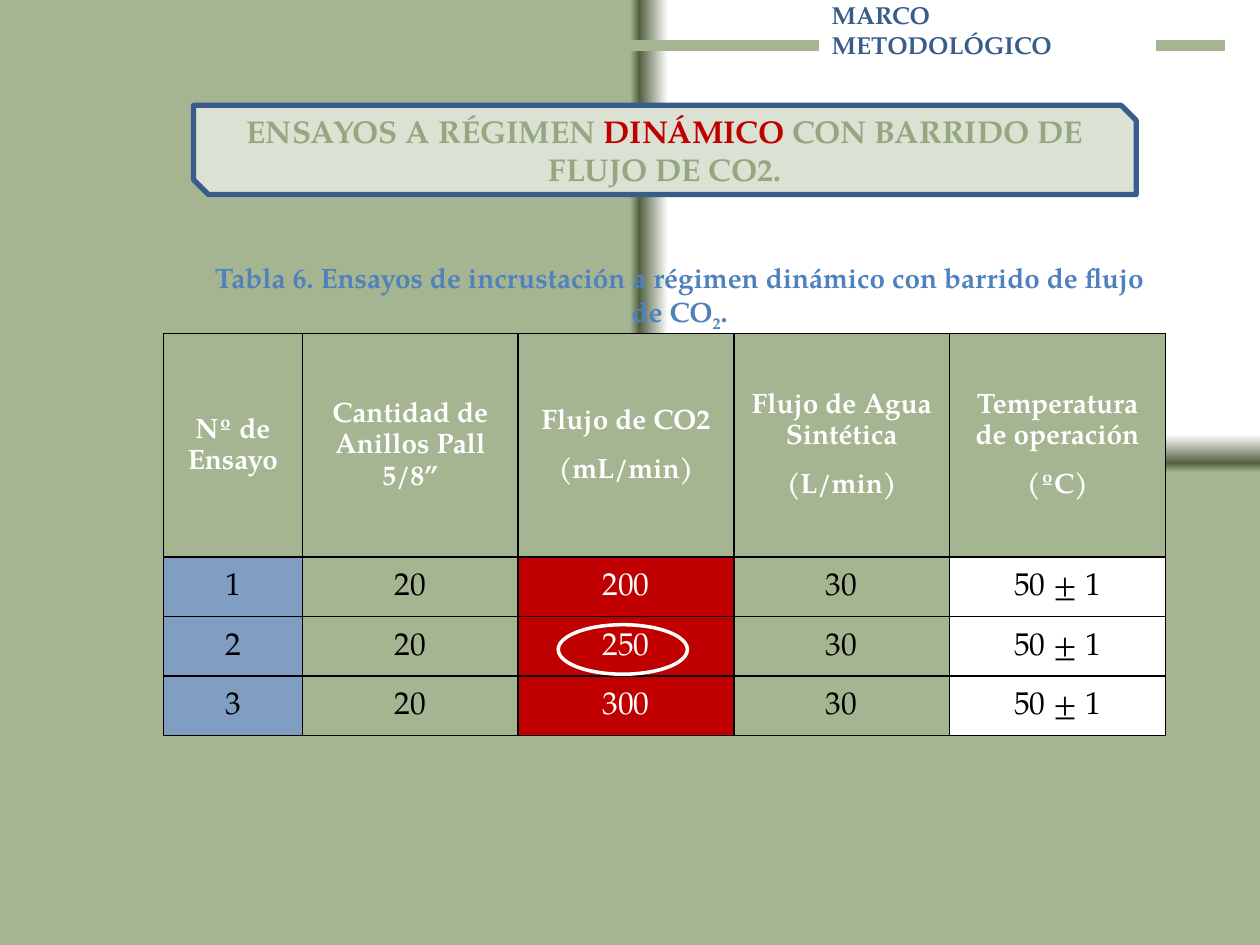
from lxml.etree import SubElement
from pptx import Presentation
from pptx.dml.color import RGBColor
from pptx.enum.shapes import MSO_CONNECTOR as Connector, MSO_SHAPE as Shape
from pptx.enum.text import MSO_ANCHOR as Anchor, MSO_AUTO_SIZE as AutoSize, PP_ALIGN as Align
from pptx.oxml.ns import qn
from pptx.util import Pt

FONT = "TeX Gyre Pagella"
COLORS = {
    "green": "A5B592", "pale": "DBE1D3", "navy": "385D8A", "blue": "4F81BD",
    "steel": "809EC2", "red": "C00000", "white": "FFFFFF", "black": "000000",
}
RGB = {name: RGBColor.from_string(value) for name, value in COLORS.items()}
BACKGROUND_STOPS = [(92, "FFFFFF"), (98, "536142"), (100, "A5B592")]
BANNER_STOPS = [(0, "AABA9A"), (49, "95A780"), (50, "899A75"), (92, "7A8869"), (100, "788668")]


def add_run(paragraph, text, size, color=None, bold=True):
    run = paragraph.add_run()
    run.text = text
    for name, value in {"name": FONT, "size": Pt(size), "bold": bold}.items():
        setattr(run.font, name, value)
    if color:
        run.font.fill.solid()
        run.font.fill.fore_color.rgb = RGB[color]
    return run


def set_gradient(fill, parent, stops):
    """Give the fill its colour stops and return the gradient element."""
    fill.gradient()
    gradient = next(parent.iter(qn("a:gradFill")))
    for child in list(gradient):
        gradient.remove(child)
    stop_list = SubElement(gradient, qn("a:gsLst"))
    for position, color in stops:
        stop = SubElement(stop_list, qn("a:gs"), pos=str(position * 1000))
        SubElement(stop, qn("a:srgbClr"), val=color)
    return gradient


presentation = Presentation()
presentation.slide_width, presentation.slide_height = Pt(720), Pt(540)
slide = presentation.slides.add_slide(presentation.slide_layouts[5])
shapes = slide.shapes

# Background: rectangular gradient centred on the top right corner
gradient = set_gradient(slide.background.fill, slide.element, BACKGROUND_STOPS)
focus = SubElement(gradient, qn("a:path"), path="rect")
SubElement(focus, qn("a:fillToRect"), l="100000", b="100000")

# Title
title = shapes.title
for name, value in {"left": 468, "top": 12.25, "width": 193, "height": 25.2}.items():
    setattr(title, name, Pt(value))
frame = title.text_frame
for name, value in {"word_wrap": True, "auto_size": AutoSize.NONE,
                    "vertical_anchor": Anchor.BOTTOM}.items():
    setattr(frame, name, value)
frame.paragraphs[0].alignment = Align.LEFT
add_run(frame.paragraphs[0], "MARCO METODOLÓGICO", 14, "navy")

# Rules on both sides of the title
for start, end in [(70.6, 468), (660.5, 700)]:
    rule = shapes.add_connector(Connector.STRAIGHT, Pt(start), Pt(26.1), Pt(end), Pt(26.1))
    rule.line.color.rgb = RGB["green"]
    rule.line.width = Pt(6.5)
    SubElement(rule.element.spPr, qn("a:effectLst"))

# Banner
banner = shapes.add_shape(Shape.SNIP_2_DIAG_RECTANGLE, Pt(110.6), Pt(60.2), Pt(538.6), Pt(51))
banner.shadow.inherit = False
banner.fill.solid()
banner.fill.fore_color.rgb = RGB["pale"]
banner.line.color.rgb = RGB["navy"]
banner.line.width = Pt(3)
banner.text_frame.vertical_anchor = Anchor.MIDDLE
paragraph = banner.text_frame.paragraphs[0]
paragraph.alignment = Align.CENTER
for text, color in [("ENSAYOS A RÉGIMEN ", None), ("DINÁMICO", "red"),
                    (" CON BARRIDO DE FLUJO DE CO2.", None)]:
    run = add_run(paragraph, text, 18, color)
    if color is None:
        gradient = set_gradient(run.font.fill, run.font._element, BANNER_STOPS)
        SubElement(gradient, qn("a:lin"), ang="5400000")

# Table of trials
HEADERS = [["Nº de Ensayo"], ["Cantidad de Anillos Pall 5/8”"], ["Flujo de CO2", "(mL/min)"],
           ["Flujo de Agua Sintética", "(L/min)"], ["Temperatura de operación", "(ºC)"]]
TRIALS = [[[str(number)], ["20"], [flow], ["30"], ["50 ± 1"]]
          for number, flow in enumerate(["200", "250", "300"], 1)]
COLUMN_FILLS = ["steel", None, "red", None, "white"]
COLUMN_WIDTHS = [79.4] + [123.3] * 4
ROW_HEIGHTS = [127.6] + [34] * 3

table = shapes.add_table(4, 5, Pt(93.4), Pt(190.6), Pt(sum(COLUMN_WIDTHS)),
                         Pt(sum(ROW_HEIGHTS))).table
table.horz_banding = False
for column, width in zip(table.columns, COLUMN_WIDTHS):
    column.width = Pt(width)
for row, height in zip(table.rows, ROW_HEIGHTS):
    row.height = Pt(height)

for row_index, row_texts in enumerate([HEADERS] + TRIALS):
    is_header = row_index == 0
    for column_index, lines in enumerate(row_texts):
        cell = table.cell(row_index, column_index)
        for name, value in {"margin_left": Pt(5), "margin_right": Pt(5), "margin_top": 0,
                            "margin_bottom": 0, "vertical_anchor": Anchor.MIDDLE}.items():
            setattr(cell, name, value)

        # Borders come before the fill in the cell properties
        properties = cell._tc.get_or_add_tcPr()
        for side in ("a:lnL", "a:lnR", "a:lnT", "a:lnB"):
            border = SubElement(properties, qn(side), w=str(Pt(1)))
            SubElement(SubElement(border, qn("a:solidFill")), qn("a:srgbClr"), val=COLORS["black"])
        fill = "green" if is_header else COLUMN_FILLS[column_index]
        if fill:
            cell.fill.solid()
            cell.fill.fore_color.rgb = RGB[fill]
        else:
            cell.fill.background()

        color = "white" if is_header or fill == "red" else "black"
        for line_index, text in enumerate(lines):
            frame = cell.text_frame
            paragraph = frame.add_paragraph() if line_index else frame.paragraphs[0]
            for name, value in {"alignment": Align.CENTER, "line_spacing": 1.15,
                                "space_before": Pt(0 if is_header else 6),
                                "space_after": Pt(10)}.items():
                setattr(paragraph, name, value)
            add_run(paragraph, text, 16 if is_header else 18, color, bold=is_header)

# Table caption
caption = shapes.add_textbox(Pt(105.1), Pt(145.4), Pt(566.6), Pt(46))
caption.text_frame.word_wrap = True
paragraph = caption.text_frame.paragraphs[0]
paragraph.alignment = Align.CENTER
add_run(paragraph, "Tabla 6. Ensayos de incrustación a régimen dinámico con barrido de flujo de CO",
        16, "blue")
subscript = add_run(paragraph, "2", 16, "blue")
subscript.font._element.set("baseline", "-25000")
add_run(paragraph, ".", 16, "blue")

# Ring around the chosen flow
ring = shapes.add_shape(Shape.OVAL, Pt(319), Pt(357), Pt(73.8), Pt(28.3))
ring.shadow.inherit = False
ring.fill.background()
ring.line.color.rgb = RGB["white"]
ring.line.width = Pt(2)

presentation.save("out.pptx")
